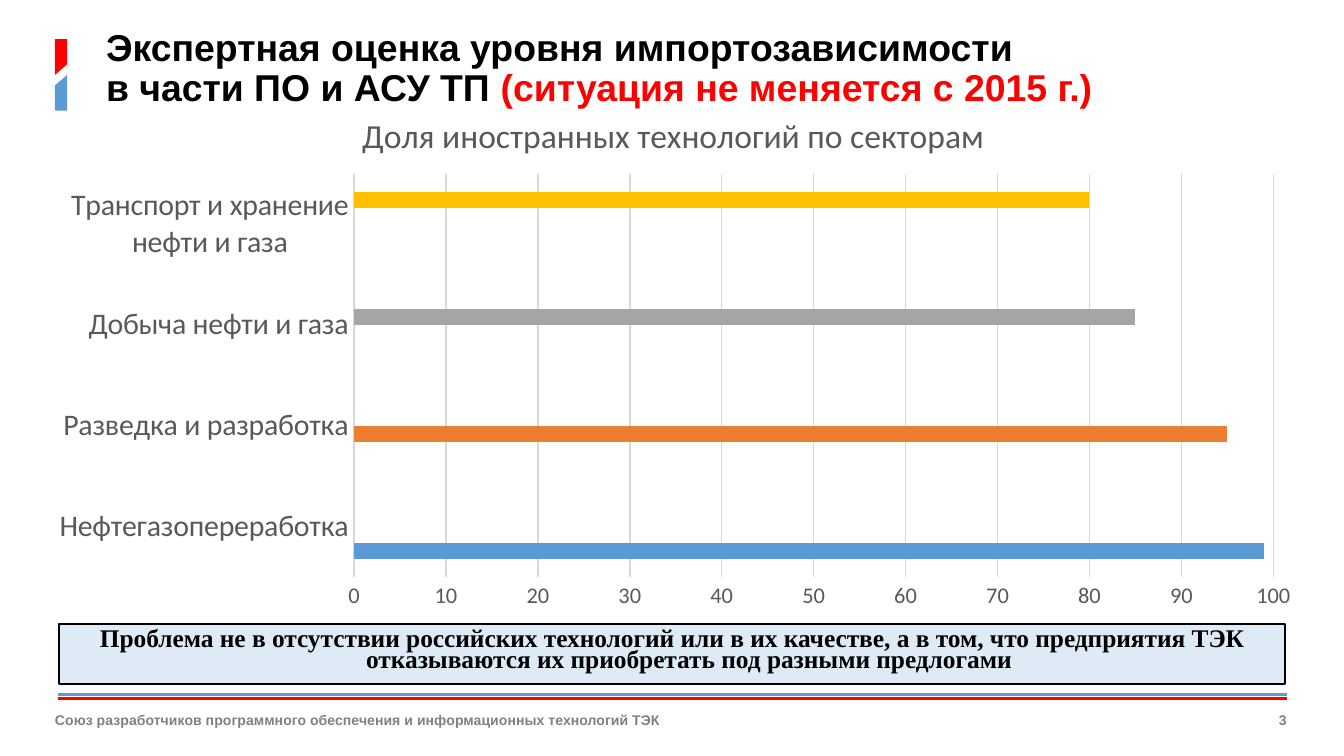
from lxml.etree import SubElement as Sub
from pptx import Presentation
from pptx.chart.data import CategoryChartData as Data
from pptx.dml.color import RGBColor as RGB
from pptx.enum.chart import XL_CHART_TYPE as Kind, XL_TICK_MARK as Tick
from pptx.enum.shapes import MSO_CONNECTOR as Link, MSO_SHAPE as Form
from pptx.enum.text import MSO_ANCHOR as Anchor, MSO_AUTO_SIZE as Auto, PP_ALIGN as Align
from pptx.oxml.ns import qn
from pptx.util import Cm, Pt

BLACK = RGB(0x00, 0x00, 0x00)
RED = RGB(0xFF, 0x00, 0x00)
BLUE = RGB(0x5B, 0x9B, 0xD5)
ORANGE = RGB(0xED, 0x7D, 0x31)
SILVER = RGB(0xA5, 0xA5, 0xA5)
GOLD = RGB(0xFF, 0xC0, 0x00)
GRAY = RGB(0x80, 0x80, 0x80)
DARK = RGB(0x59, 0x59, 0x59)
PALE = RGB(0xD9, 0xD9, 0xD9)
ICE = RGB(0xDE, 0xEB, 0xF7)

SHARES = [
    ("Нефтегазопереработка", 99, BLUE),
    ("Разведка и разработка", 95, ORANGE),
    ("Добыча нефти и газа", 85, SILVER),
    ("Транспорт и хранение нефти и газа", 80, GOLD),
]


def style(font, size, color, name="Calibri", bold=False):
    """Set the face, size and colour of a font."""
    font.name, font.size, font.bold = name, Pt(size), bold
    font.color.rgb = color


def write(frame, *parts, size, name="Arial", align=Align.LEFT,
          anchor=Anchor.MIDDLE, space=1.0, inset=None):
    """Fill a frame with one bold paragraph of (text, colour) parts."""
    frame.word_wrap, frame.auto_size = True, Auto.NONE
    frame.vertical_anchor = anchor
    if inset is not None:
        frame.margin_left = frame.margin_right = inset
        frame.margin_top = frame.margin_bottom = inset
    para = frame.paragraphs[0]
    para.alignment, para.line_spacing = align, space
    for text, color in parts:
        for i, line in enumerate(text.split("\n")):
            if i:
                para.add_line_break()
            run = para.add_run()
            run.text = line
            style(run.font, size, color, name, True)
    return para


def add_mark(slide, x, y, w, h):
    """Draw the red and blue emblem, split by a slanted gap."""
    slant, half = 0.2, h / 2
    red = [(x, y), (x + w, y), (x + w, y + half - slant), (x, y + half)]
    blue = [(x, y + half + slant), (x + w, y + half), (x + w, y + h), (x, y + h)]
    for points, color in ((red, RED), (blue, BLUE)):
        spots = [(Cm(a), Cm(b)) for a, b in points]
        pen = slide.shapes.build_freeform(*spots[0])
        pen.add_line_segments(spots[1:], close=True)
        piece = pen.convert_to_shape()
        piece.shadow.inherit = False
        piece.fill.solid()
        piece.fill.fore_color.rgb = color
        piece.line.fill.background()


def add_title(slide, x, y, w, h):
    """Place and fill the title."""
    title = slide.shapes.title
    title.left, title.top, title.width, title.height = map(Cm, (x, y, w, h))
    write(title.text_frame,
          ("Экспертная оценка уровня импортозависимости\nв части ПО и АСУ ТП ", BLACK),
          ("(ситуация не меняется с 2015 г.)", RED), size=20, space=0.9)


def set_plot(chart, **box):
    """Fix the inner plot area as fractions of the chart."""
    area = chart._chartSpace.chart.plotArea
    for old in area.findall(qn("c:layout")):
        area.remove(old)
    frame = Sub(area, qn("c:layout"))
    area.insert(0, frame)
    inner = Sub(frame, qn("c:manualLayout"))
    rules = {"layoutTarget": "inner", "xMode": "edge", "yMode": "edge", **box}
    for key, val in rules.items():
        Sub(inner, qn("c:" + key)).set("val", str(val))


def add_bars(slide, x, y, w, h):
    """Chart the share of foreign technology, one colour per sector."""
    data = Data()
    data.categories = [row[0] for row in SHARES]
    for i, (_, share, _) in enumerate(SHARES):
        data.add_series(f"Series {i + 1}",
                        [share if i == j else None for j in range(len(SHARES))])
    chart = slide.shapes.add_chart(
        Kind.BAR_CLUSTERED, *map(Cm, (x, y, w, h)), data).chart
    style(chart.font, 10, BLACK)
    chart.has_legend = False
    chart.has_title = True
    head = chart.chart_title.text_frame
    head.text = "Доля иностранных технологий по секторам"
    style(head.paragraphs[0].runs[0].font, 18, DARK)
    chart.chart_title.include_in_layout = False

    plot = chart.plots[0]
    plot.gap_width, plot.overlap, plot.vary_by_categories = 219, 0, False
    for row, (_, _, color) in zip(plot.series, SHARES):
        row.format.fill.solid()
        row.format.fill.fore_color.rgb = color

    cats, vals = chart.category_axis, chart.value_axis
    for axis, size in ((cats, 16), (vals, 12)):
        axis.major_tick_mark = axis.minor_tick_mark = Tick.NONE
        style(axis.tick_labels.font, size, DARK)
    vals.minimum_scale, vals.maximum_scale, vals.major_unit = 0, 100, 10
    vals.format.line.fill.background()
    vals.has_major_gridlines = True
    for line in (cats.format.line, vals.major_gridlines.format.line):
        line.color.rgb, line.width = PALE, Pt(0.75)
    set_plot(chart, x=0.25, y=0.16, w=0.72, h=0.76)


def add_note(slide, x, y, w, h):
    """Add the framed conclusion."""
    note = slide.shapes.add_shape(Form.RECTANGLE, *map(Cm, (x, y, w, h)))
    note.shadow.inherit = False
    note.fill.solid()
    note.fill.fore_color.rgb = ICE
    note.line.color.rgb, note.line.width = BLACK, Pt(1)
    para = write(note.text_frame,
                 ("Проблема не в отсутствии российских технологий или в их качестве, "
                  "а в том, что предприятия ТЭК отказываются их приобретать "
                  "под разными предлогами", BLACK),
                 size=13.6, name="Times New Roman", align=Align.CENTER,
                 anchor=Anchor.TOP, space=0.7)
    props = para._p.get_or_add_pPr()
    props.set("marL", str(Cm(0.64)))
    props.set("indent", str(-Cm(0.64)))


def add_foot(slide, x, y, w, h):
    """Add the double rule, the owner and the page number."""
    for top, color in ((y, BLUE), (y + 0.08, RED)):
        rule = slide.shapes.add_connector(
            Link.STRAIGHT, *map(Cm, (x + 0.05, top, x + w, top)))
        rule.line.color.rgb, rule.line.width = color, Pt(1.5)
        Sub(rule._element.spPr, qn("a:effectLst"))
    owner = "Союз разработчиков программного обеспечения и информационных технологий ТЭК"
    cells = ((x, 16, owner, Align.LEFT), (x + w - 2, 2, "3", Align.RIGHT))
    for left, wide, text, align in cells:
        box = slide.shapes.add_textbox(*map(Cm, (left, y + 0.08, wide, h - 0.08)))
        write(box.text_frame, (text, GRAY), size=7.5, align=align, inset=0)


def main():
    """Build and save the slide."""
    deck = Presentation()
    deck.slide_width, deck.slide_height = Cm(25.4), Cm(14.29)
    slide = deck.slides.add_slide(deck.slide_layouts[5])
    add_foot(slide, 1.04, 13.13, 23.28, 0.87)
    add_mark(slide, 1.04, 0.74, 0.23, 1.35)
    add_title(slide, 1.75, 0.53, 20.57, 1.57)
    add_bars(slide, 0.66, 1.68, 24.13, 10.03)
    add_note(slide, 1.12, 11.79, 23.16, 1.14)
    deck.save("out.pptx")


if __name__ == "__main__":
    main()
